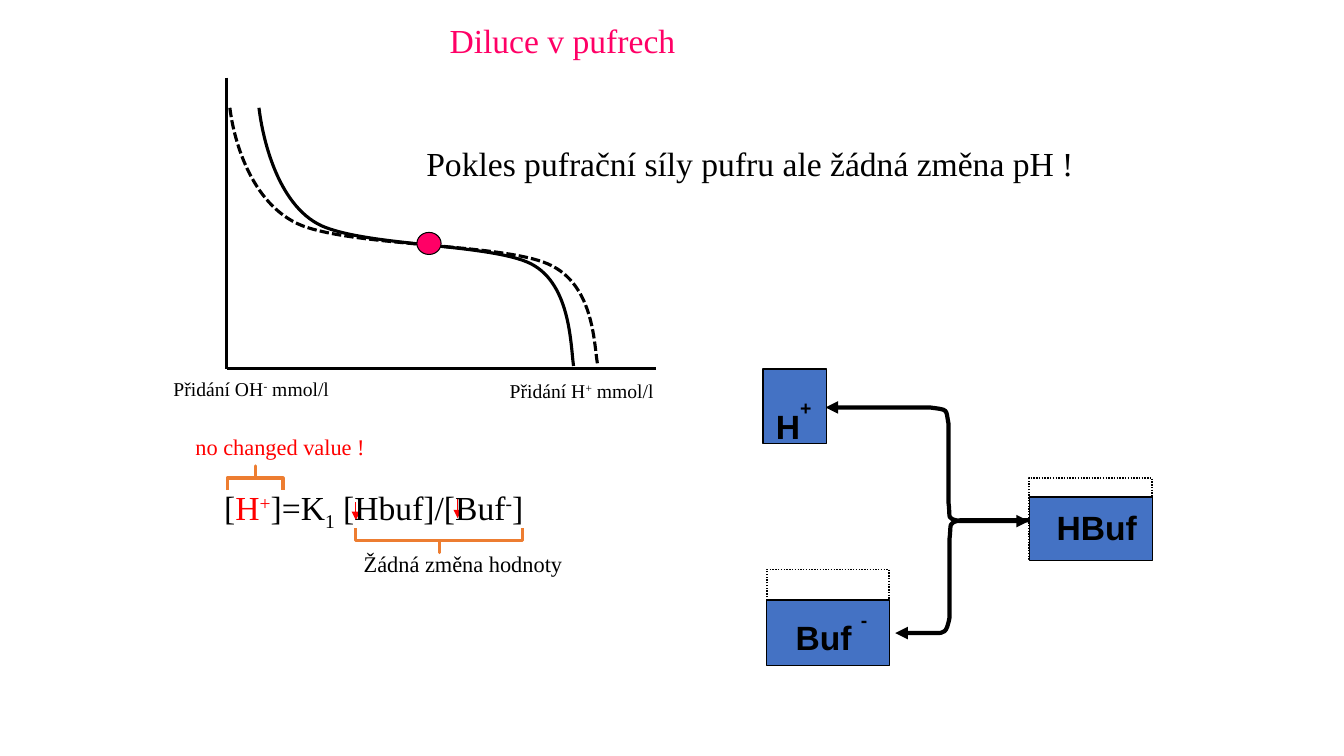
import pptx
import pptx.util
import pptx.oxml.ns
import pptx.dml.color
import pptx.enum.dml
import pptx.enum.shapes
import pptx.enum.text
import lxml.etree

Pt = pptx.util.Pt
RGBColor = pptx.dml.color.RGBColor
SHAPES = pptx.enum.shapes.MSO_SHAPE
DASHES = pptx.enum.dml.MSO_LINE
ALIGN = pptx.enum.text.PP_ALIGN
qn = pptx.oxml.ns.qn

BLACK = RGBColor(0, 0, 0)
RED = RGBColor(255, 0, 0)
PINK = RGBColor(255, 0, 102)
BLUE = RGBColor(68, 114, 196)
ORANGE = RGBColor(237, 125, 49)
SERIF = "Times New Roman"


def format_outline(shape, color, width, dash=None, ends=()):
    shape.line.color.rgb = color
    shape.line.width = Pt(width)
    if dash:
        shape.line.dash_style = dash
    properties = shape._element.spPr
    for end in ends:
        lxml.etree.SubElement(properties.find(qn("a:ln")), qn(f"a:{end}")).set("type", "triangle")
    lxml.etree.SubElement(properties, qn("a:effectLst"))


def write_text(shape, box, runs, size, font_name=SERIF, align=ALIGN.LEFT, wrap=False, bold=False):
    shape.left, shape.top, shape.width, shape.height = map(Pt, box)
    frame = shape.text_frame
    frame_format = {
        "word_wrap": wrap,
        "auto_size": pptx.enum.text.MSO_AUTO_SIZE.SHAPE_TO_FIT_TEXT,
        "vertical_anchor": pptx.enum.text.MSO_ANCHOR.TOP,
    }
    for name, value in frame_format.items():
        setattr(frame, name, value)
    paragraph = frame.paragraphs[0]
    paragraph.alignment = align
    for text, color, baseline in runs:
        run = paragraph.add_run()
        run.text = text
        for name, value in {"size": Pt(size), "name": font_name, "bold": bold}.items():
            setattr(run.font, name, value)
        run.font.color.rgb = color
        if baseline:
            run._r.get_or_add_rPr().set("baseline", str(baseline * 1000))


presentation = pptx.Presentation()
presentation.slide_width = Pt(960)
presentation.slide_height = Pt(540)
slide = presentation.slides.add_slide(presentation.slide_layouts[5])

write_text(slide.shapes.title, (313.9, 10.8, 177.1, 36.7), [("Diluce v pufrech", PINK, 0)], 24)

curves = [
    ([(735, 372.2), (685.4, 372.2), (676, 370, 679, 371, 677.6, 359.5), (677.6, 303),
      (675.4, 291.6, 678, 293, 664, 291), (589.7, 291)], 3, None, ("headEnd", "tailEnd")),
    ([(735, 371.6), (686, 371.6), (676.8, 373.7, 679.7, 373.7, 678.2, 385.2), (678.2, 441.4),
      (676, 452.2, 674.6, 452.2, 668, 452.2), (639.4, 452.2)], 3, None, ("tailEnd",)),
    ([(164.2, 77), (166.3, 95.8, 177.8, 146.2, 216, 161.3),
      (254.2, 175.7, 352, 174.2, 388, 187.2),
      (424.8, 200.2, 424, 245.5, 427, 261.4)], 2.25, DASHES.SQUARE_DOT, ()),
    ([(185, 77), (187.2, 95.8, 197.3, 146.2, 229.7, 161.3),
      (262, 175.7, 345.6, 174.2, 376.6, 187.2),
      (407.5, 200.2, 407.5, 245.5, 409.7, 261.4)], 2.25, None, ()),
]
for segments, width, dash, ends in curves:
    vertices = [tuple(map(Pt, segment[-2:])) for segment in segments]
    builder = slide.shapes.build_freeform(*vertices[0])
    builder.add_line_segments(vertices[1:], close=False)
    curve = builder.convert_to_shape()
    for element, segment in zip(list(curve._element.iter(qn("a:lnTo"))), segments[1:]):
        if len(segment) == 6:
            element.tag = qn("a:cubicBezTo")
            for index in (0, 1):
                x, y = segment[2 * index:2 * index + 2]
                control = lxml.etree.Element(qn("a:pt"))
                control.set("x", str(int(Pt(x) - curve.left)))
                control.set("y", str(int(Pt(y) - curve.top)))
                element.insert(index, control)
    curve.fill.background()
    format_outline(curve, BLACK, width, dash, ends)

lines = [
    ((468.7, 263.5, 162, 263.5), BLACK, 2.25, ()),
    ((162, 55.4, 162, 263.5), BLACK, 2.25, ()),
    ((254.2, 358.6, 254.2, 371.5), RED, 0.5, ("tailEnd",)),
    ((326.9, 356.4, 326.9, 370.1), RED, 0.5, ("tailEnd",)),
]
for ends_at, color, width, ends in lines:
    connector = slide.shapes.add_connector(
        pptx.enum.shapes.MSO_CONNECTOR.STRAIGHT, *map(Pt, ends_at))
    format_outline(connector, color, width, ends=ends)

figures = [
    (SHAPES.RECTANGLE, (735.1, 341.3, 87.8, 58.3), None, BLACK, 1, DASHES.ROUND_DOT, 0),
    (SHAPES.RECTANGLE, (545.8, 263.5, 43.9, 53.3), None, BLACK, 1, DASHES.ROUND_DOT, 0),
    (SHAPES.RECTANGLE, (545, 263.7, 45.4, 53.3), BLUE, BLACK, 1, None, 0),
    (SHAPES.RECTANGLE, (547.9, 406.8, 87.1, 67.7), None, BLACK, 1, DASHES.ROUND_DOT, 0),
    (SHAPES.RECTANGLE, (735.5, 355, 87.6, 45.5), BLUE, BLACK, 1, None, 0),
    (SHAPES.RECTANGLE, (547.7, 428.7, 87.6, 46.5), BLUE, BLACK, 1, None, 0),
    (SHAPES.RIGHT_BRACE, (305.1, 326.4, 17.3, 119.3), None, ORANGE, 2.25, None, 90),
    (SHAPES.RIGHT_BRACE, (173.6, 321.5, 17.3, 39.8), None, ORANGE, 2.25, None, 270),
    (SHAPES.OVAL, (297.8, 166, 17.3, 15.8), PINK, BLACK, 0.75, None, 0),
]
for kind, box, fill, color, width, dash, rotation in figures:
    shape = slide.shapes.add_shape(kind, *map(Pt, box))
    shape.rotation = rotation
    if kind == SHAPES.RIGHT_BRACE:
        shape.adjustments[0] = 0
        shape.adjustments[1] = 0.5
    if fill:
        shape.fill.solid()
        shape.fill.fore_color.rgb = fill
    else:
        shape.fill.background()
    format_outline(shape, color, width, dash)

buffer_labels = [
    ((546.5, 279.4, 41, 36), [("H", BLACK, 0), ("+", BLACK, 70)], True),
    ((560.9, 430.6, 66.2, 36), [("Buf ", BLACK, 0), ("-", BLACK, 70)], False),
    ((747.4, 358.6, 72, 36), [("HBuf", BLACK, 0)], False),
]
for box, runs, wrap in buffer_labels:
    label = slide.shapes.add_textbox(0, 0, 0, 0)
    write_text(label, box, runs, 24, "Arial", ALIGN.CENTER, wrap, True)

equation = [
    ("[", BLACK, 0), ("H", RED, 0), ("+", RED, 30), ("]=K", BLACK, 0), ("1", BLACK, -25),
    (" [Hbuf]/[Buf", BLACK, 0), ("-", BLACK, 30), ("]", BLACK, 0),
]
notes = [
    ((153.1, 344.2, 233.3, 36.7), equation, 24, False),
    ((252.7, 389.5, 158.4, 26.6), [("Žádná změna hodnoty", BLACK, 0)], 16, False),
    ((132.5, 306, 137.5, 26.6), [("no changed value !", RED, 0)], 16, False),
    ((357, 267.1, 184.3, 24.5),
     [("Přidání H", BLACK, 0), ("+", BLACK, 30), (" mmol/l", BLACK, 0)], 14, True),
    ((116.8, 265.7, 195.8, 24.5),
     [("Přidání OH", BLACK, 0), ("-", BLACK, 30), (" mmol/l", BLACK, 0)], 14, True),
    ((297.4, 98.6, 481, 36.7),
     [("Pokles pufrační síly pufru ale žádná změna pH !", BLACK, 0)], 24, False),
]
for box, runs, size, wrap in notes:
    write_text(slide.shapes.add_textbox(0, 0, 0, 0), box, runs, size, wrap=wrap)

presentation.save("out.pptx")
